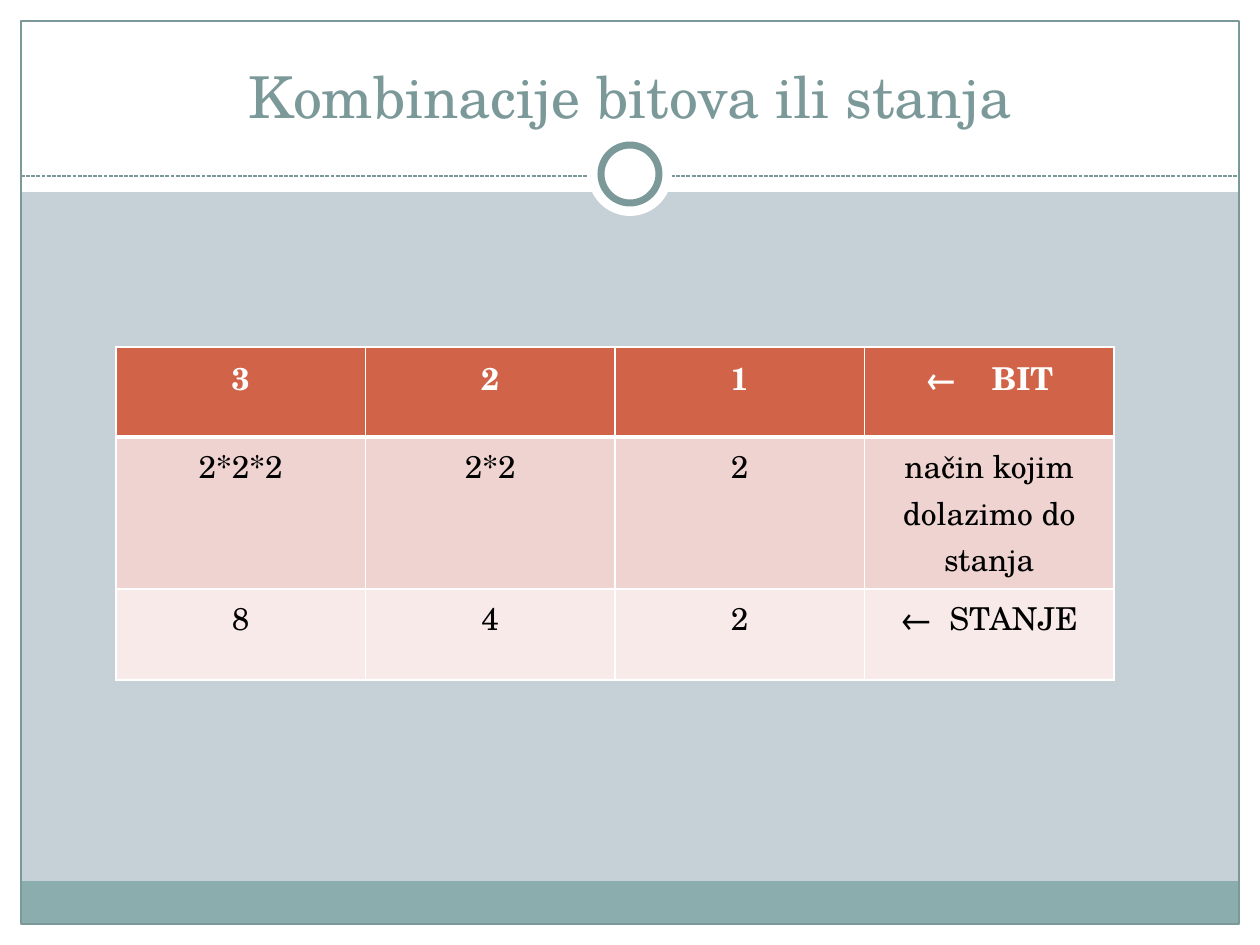
from lxml import etree
from pptx import Presentation
from pptx.dml.color import RGBColor
from pptx.enum.dml import MSO_LINE
from pptx.enum.shapes import MSO_CONNECTOR, MSO_SHAPE
from pptx.enum.text import MSO_ANCHOR, MSO_AUTO_SIZE, PP_ALIGN
from pptx.oxml.ns import qn
from pptx.util import Emu, Pt

RECT, OVAL = MSO_SHAPE.RECTANGLE, MSO_SHAPE.OVAL
STRAIGHT, DASH = MSO_CONNECTOR.STRAIGHT, MSO_LINE.SQUARE_DOT
CENTER, BOTTOM = PP_ALIGN.CENTER, MSO_ANCHOR.BOTTOM
NO_FIT = MSO_AUTO_SIZE.NONE

WHITE = RGBColor(0xFF, 0xFF, 0xFF)
BLACK = RGBColor(0, 0, 0)
BACKGROUND = RGBColor(0xC5, 0xD1, 0xD7)
TEAL = RGBColor(0x7C, 0x99, 0x9A)
FOOTER = RGBColor(0x8C, 0xAD, 0xAE)
HEADER = RGBColor(0xD1, 0x63, 0x49)
PINK = RGBColor(0xEE, 0xD3, 0xD0)
PALE = RGBColor(0xF7, 0xEA, 0xE9)

FONT = "TeX Gyre Schola"
SCALE = 914400 / 126
WIDTH, HEIGHT = 1260, 945
MARGIN = 21

ROWS = [
    ["3", "2", "1", "← BIT"],
    ["2*2*2", "2*2", "2", "način kojim dolazimo do stanja"],
    ["8", "4", "2", "← STANJE"],
]
ROW_HEIGHTS = [90, 152, 91]
ROW_FILLS = [HEADER, PINK, PALE]
ARROW_GAPS = {0: 15, 2: 5}  # points of extra space after the arrow, by row


def px(n):
    return Emu(round(n * SCALE))


class Deck:
    def __init__(self):
        self.prs = Presentation()
        self.prs.slide_width, self.prs.slide_height = px(WIDTH), px(HEIGHT)
        self.s = self.prs.slides.add_slide(self.prs.slide_layouts[5])
        fill = self.s.background.fill
        fill.solid()
        fill.fore_color.rgb = BACKGROUND

    def style(self, p, size, color, bold=False):
        p.alignment = CENTER
        for r in p.runs:
            r.font.name, r.font.size = FONT, Pt(size)
            r.font.color.rgb, r.font.bold = color, bold

    def shape(self, kind, x, y, w, h, fill=None, line=None, weight=0.75):
        sp = self.s.shapes.add_shape(kind, px(x), px(y), px(w), px(h))
        sp.shadow.inherit = False
        if fill is None:
            sp.fill.background()
        else:
            sp.fill.solid()
            sp.fill.fore_color.rgb = fill
        if line is None:
            sp.line.fill.background()
        else:
            sp.line.color.rgb, sp.line.width = line, Pt(weight)

    def circle(self, cx, cy, size, **look):
        self.shape(OVAL, cx - size // 2, cy - size // 2, size, size, **look)

    def dashed_line(self, x1, x2, y, color):
        line = self.s.shapes.add_connector(STRAIGHT, px(x1), px(y), px(x2), px(y))
        line.line.color.rgb, line.line.width = color, Pt(0.75)
        line.line.dash_style = DASH
        etree.SubElement(line._element.spPr, qn("a:effectLst"))

    def title(self, text, x, y, w, h):
        sp = self.s.shapes.title
        sp.left, sp.top, sp.width, sp.height = px(x), px(y), px(w), px(h)
        tf = sp.text_frame
        tf.text = text
        tf.auto_size, tf.vertical_anchor = NO_FIT, BOTTOM
        self.style(tf.paragraphs[0], 33, TEAL)
        self.s.shapes._spTree.append(sp._element)  # in front of the frame

    def borders(self, cell, top, bottom):
        tc_pr = cell._tc.get_or_add_tcPr()
        for side, weight in zip("LRTB", (1, 1, top, bottom)):
            ln = etree.SubElement(tc_pr, qn(f"a:ln{side}"), w=str(Pt(weight)))
            fill = etree.SubElement(ln, qn("a:solidFill"))
            etree.SubElement(fill, qn("a:srgbClr"), val=str(WHITE))

    def arrow_gap(self, p, points):
        arrow = p.runs[0]
        label = arrow.text[1:]
        arrow.text = arrow.text[0]
        p.add_run().text = label
        arrow.font._element.set("spc", str(points * 100))

    def table(self, x, y, w):
        frame = self.s.shapes.add_table(
            len(ROWS), len(ROWS[0]), px(x), px(y), px(w), px(sum(ROW_HEIGHTS)))
        table = frame.table
        table.first_row = table.horz_banding = False
        for i, texts in enumerate(ROWS):
            table.rows[i].height = px(ROW_HEIGHTS[i])
            header = i == 0
            for j, text in enumerate(texts):
                cell = table.cell(i, j)
                cell.text_frame.text = text
                p = cell.text_frame.paragraphs[0]
                if text.startswith("←"):
                    self.arrow_gap(p, ARROW_GAPS[i])
                self.style(p, 18, WHITE if header else BLACK, header)
                self.borders(cell, 3 if i == 1 else 1, 3 if header else 1)
                cell.fill.solid()
                cell.fill.fore_color.rgb = ROW_FILLS[i]


def main():
    deck = Deck()
    inner_w, inner_h = WIDTH - 2 * MARGIN, HEIGHT - 2 * MARGIN

    # White margins and header band
    for box in ((0, HEIGHT - MARGIN, WIDTH, MARGIN), (0, 0, WIDTH, 192),
                (0, 0, MARGIN, HEIGHT), (WIDTH - MARGIN, 0, MARGIN, HEIGHT)):
        deck.shape(RECT, *box, fill=WHITE)

    # Footer band, frame and divider
    deck.shape(RECT, MARGIN, 881, inner_w, 43, fill=FOOTER)
    deck.shape(RECT, MARGIN, MARGIN, inner_w, inner_h, line=TEAL)
    deck.dashed_line(MARGIN, WIDTH - MARGIN, 176, TEAL)

    # Ring on the divider
    deck.circle(WIDTH // 2, 174, 84, fill=WHITE)
    deck.circle(WIDTH // 2, 174, 58, fill=WHITE, line=TEAL, weight=4)

    # Title and table
    deck.title("Kombinacije bitova ili stanja", 42, 32, 1176, 104)
    deck.table(116, 347, 998)

    deck.prs.save("out.pptx")


if __name__ == "__main__":
    main()
